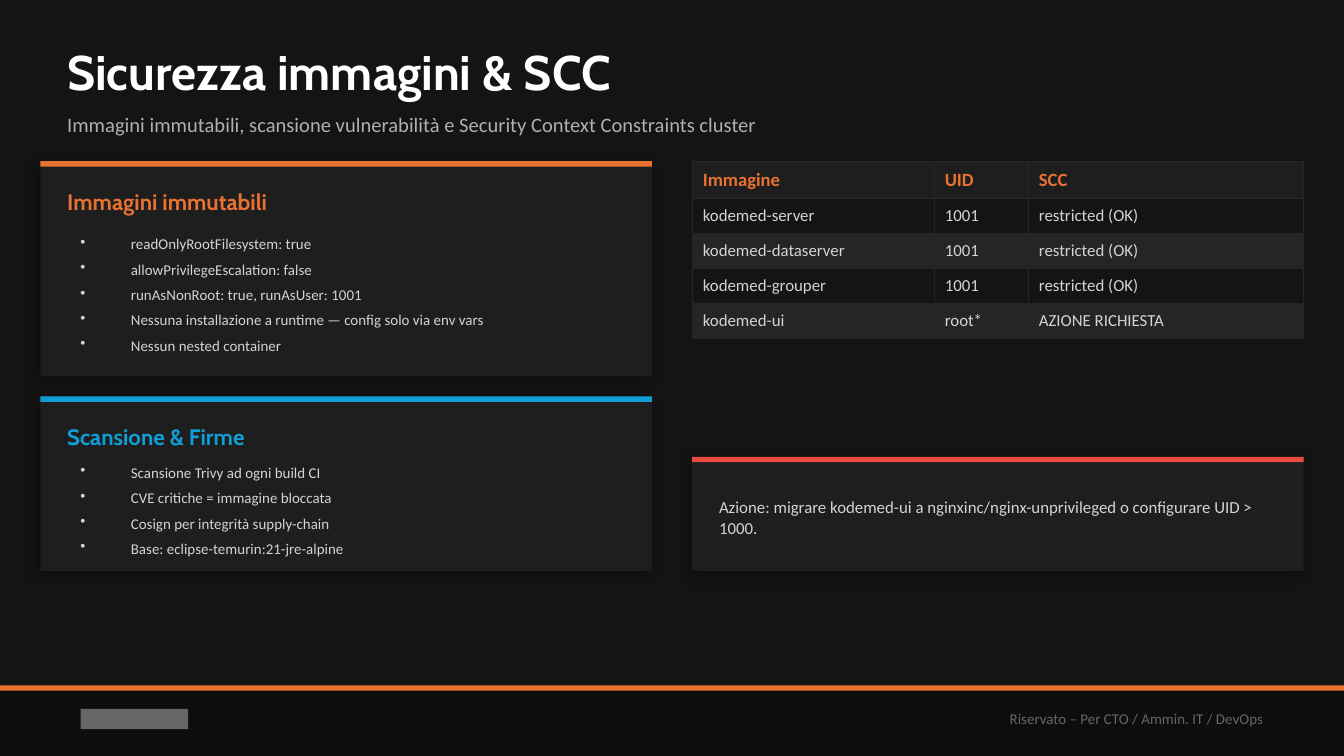
from lxml import etree
from pptx import Presentation
from pptx.dml.color import RGBColor
from pptx.enum.shapes import MSO_SHAPE
from pptx.enum.text import MSO_ANCHOR, PP_ALIGN
from pptx.oxml import parse_xml
from pptx.oxml.ns import nsdecls, qn
from pptx.util import Pt

RECTANGLE = MSO_SHAPE.RECTANGLE
TOP, MIDDLE = MSO_ANCHOR.TOP, MSO_ANCHOR.MIDDLE
LEFT, RIGHT = PP_ALIGN.LEFT, PP_ALIGN.RIGHT

EMU_PER_PX = 4572  # 200 px to the inch
SLIDE_WIDTH, SLIDE_HEIGHT = 2000, 1125
CARD_WIDTH, CARD_PADDING, BAR_HEIGHT = 910, 40, 8
LEFT_COLUMN, RIGHT_COLUMN = 60, 1030

BACKGROUND = RGBColor(0x14, 0x14, 0x14)
FOOTER = RGBColor(0x0D, 0x0D, 0x0D)
PANEL = RGBColor(0x1E, 0x1E, 0x1E)
STRIPE = RGBColor(0x25, 0x25, 0x25)
ORANGE = RGBColor(0xE9, 0x71, 0x32)
BLUE = RGBColor(0x0F, 0x9E, 0xD5)
RED = RGBColor(0xE7, 0x4C, 0x3C)
WHITE = RGBColor(0xFF, 0xFF, 0xFF)
LIGHT = RGBColor(0xD4, 0xD4, 0xD4)
SILVER = RGBColor(0xB0, 0xB0, 0xB0)
GREY = RGBColor(0x66, 0x66, 0x66)


def text_format(size, color, name="Calibri", bold=False):
    return {"size": Pt(size), "color": color, "name": name, "bold": bold}


TITLE = text_format(26, WHITE, "Cabin", True)
SUBTITLE = text_format(11, SILVER)
BULLET = text_format(8, LIGHT)
BODY = text_format(9, LIGHT)
TABLE_HEAD = text_format(10, ORANGE, bold=True)
CLASSIFICATION = text_format(8, GREY)

IMMUTABLE = [
    "readOnlyRootFilesystem: true",
    "allowPrivilegeEscalation: false",
    "runAsNonRoot: true, runAsUser: 1001",
    "Nessuna installazione a runtime — config solo via env vars",
    "Nessun nested container",
]
SCANNING = [
    "Scansione Trivy ad ogni build CI",
    "CVE critiche = immagine bloccata",
    "Cosign per integrità supply-chain",
    "Base: eclipse-temurin:21-jre-alpine",
]
IMAGES = [
    ("Immagine", "UID", "SCC"),
    ("kodemed-server", "1001", "restricted (OK)"),
    ("kodemed-dataserver", "1001", "restricted (OK)"),
    ("kodemed-grouper", "1001", "restricted (OK)"),
    ("kodemed-ui", "root*", "AZIONE RICHIESTA"),
]


def px(length):
    return length * EMU_PER_PX


def place(*lengths):
    return [px(length) for length in lengths]


def apply_format(font, style):
    for key, value in style.items():
        if key == "color":
            font.color.rgb = value
        else:
            setattr(font, key, value)


def add_span(para, text, style):
    span = para.add_run()
    span.text = text
    apply_format(span.font, style)


def add_bullet(para, indent):
    properties = para._p.get_or_add_pPr()
    properties.set("marL", str(indent))
    properties.set("indent", str(-indent))
    etree.SubElement(properties, qn("a:buChar")).set("char", "•")


def add_text(page, area, items, style, inset=0, anchor=MIDDLE, align=LEFT, bullets=False):
    frame = page.shapes.add_textbox(*place(*area)).text_frame
    frame.word_wrap = True
    frame.vertical_anchor = anchor
    if inset is not None:
        for side in ("left", "top", "right", "bottom"):
            setattr(frame, f"margin_{side}", px(inset))
    for index, item in enumerate(items):
        para = frame.add_paragraph() if index else frame.paragraphs[0]
        para.alignment = align
        if bullets:
            para.space_after = Pt(4)
            add_bullet(para, px(75))
            apply_format(para.font, style)
        add_span(para, item, style)


def add_rectangle(page, area, color):
    box = page.shapes.add_shape(RECTANGLE, *place(*area))
    box.shadow.inherit = False
    box.fill.solid()
    box.fill.fore_color.rgb = color
    box.line.fill.background()
    return box


def add_shadow(box):
    effects = box._element.spPr.find(qn("a:effectLst"))
    effects.append(parse_xml(
        f'<a:outerShdw {nsdecls("a")} blurRad="{Pt(8)}" dist="{Pt(3)}" '
        'dir="8100000" algn="bl" rotWithShape="0"><a:srgbClr val="000000">'
        '<a:alpha val="35000"/></a:srgbClr></a:outerShdw>'))


def add_card(page, left, top, height, accent):
    add_shadow(add_rectangle(page, (left, top, CARD_WIDTH, height), PANEL))
    add_rectangle(page, (left, top, CARD_WIDTH, BAR_HEIGHT), accent)


def add_list_card(page, top, height, accent, heading, items, list_top, list_height):
    add_card(page, LEFT_COLUMN, top, height, accent)
    left, width = LEFT_COLUMN + CARD_PADDING, CARD_WIDTH - 2 * CARD_PADDING
    add_text(page, (left, top + 30, width, 60), [heading],
             text_format(12, accent, "Cabin", True))
    add_text(page, (left, list_top, width, list_height), items, BULLET,
             inset=None, anchor=TOP, bullets=True)


def add_borders(cell):
    properties = cell._tc.get_or_add_tcPr()
    for index, side in enumerate("LRTB"):
        properties.insert(index, parse_xml(
            f'<a:ln{side} {nsdecls("a")} w="{Pt(0.5)}"><a:solidFill>'
            f'<a:srgbClr val="{STRIPE}"/></a:solidFill></a:ln{side}>'))


def add_image_table(page, left, top, widths, row_height):
    area = place(left, top, sum(widths), row_height * len(IMAGES))
    table = page.shapes.add_table(len(IMAGES), len(widths), *area).table
    for column, width in zip(table.columns, widths):
        column.width = px(width)
    for row, values in enumerate(IMAGES):
        fill = PANEL if row == 0 else (STRIPE, BACKGROUND)[row % 2]
        for column, value in enumerate(values):
            cell = table.cell(row, column)
            cell.fill.solid()
            cell.fill.fore_color.rgb = fill
            cell.vertical_anchor = MIDDLE
            cell.margin_left = cell.margin_right = px(16)
            cell.margin_top = cell.margin_bottom = px(11)
            add_span(cell.text_frame.paragraphs[0], value, BODY if row else TABLE_HEAD)
            add_borders(cell)


def add_footer(page):
    add_rectangle(page, (0, 1020, SLIDE_WIDTH, 105), FOOTER)
    add_rectangle(page, (0, 1020, SLIDE_WIDTH, BAR_HEIGHT), ORANGE)
    add_rectangle(page, (120, 1055, 160, 30), GREY)  # company placeholder
    add_text(page, (1100, 1030, 800, 80), ["Riservato – Per CTO / Ammin. IT / DevOps"],
             CLASSIFICATION, inset=None, align=RIGHT)


def main():
    deck = Presentation()
    deck.slide_width, deck.slide_height = place(SLIDE_WIDTH, SLIDE_HEIGHT)
    page = deck.slides.add_slide(deck.slide_layouts[6])
    page.background.fill.solid()
    page.background.fill.fore_color.rgb = BACKGROUND

    add_footer(page)

    # Heading
    add_text(page, (100, 50, 1800, 110), ["Sicurezza immagini & SCC"], TITLE)
    subtitle = ("Immagini immutabili, scansione vulnerabilità e "
                "Security Context Constraints cluster")
    add_text(page, (100, 150, 1800, 70), [subtitle], SUBTITLE)

    # Left column
    add_list_card(page, 240, 320, ORANGE, "Immagini immutabili", IMMUTABLE, 340, 200)
    add_list_card(page, 590, 260, BLUE, "Scansione & Firme", SCANNING, 680, 160)

    # Right column
    add_image_table(page, RIGHT_COLUMN, 240, (360, 140, 410), 40)
    add_card(page, RIGHT_COLUMN, 680, 170, RED)
    action = ("Azione: migrare kodemed-ui a nginxinc/nginx-unprivileged "
              "o configurare UID > 1000.")
    add_text(page, (RIGHT_COLUMN + CARD_PADDING, 710, CARD_WIDTH - 2 * CARD_PADDING, 120),
             [action], BODY)

    deck.save("out.pptx")


if __name__ == "__main__":
    main()
